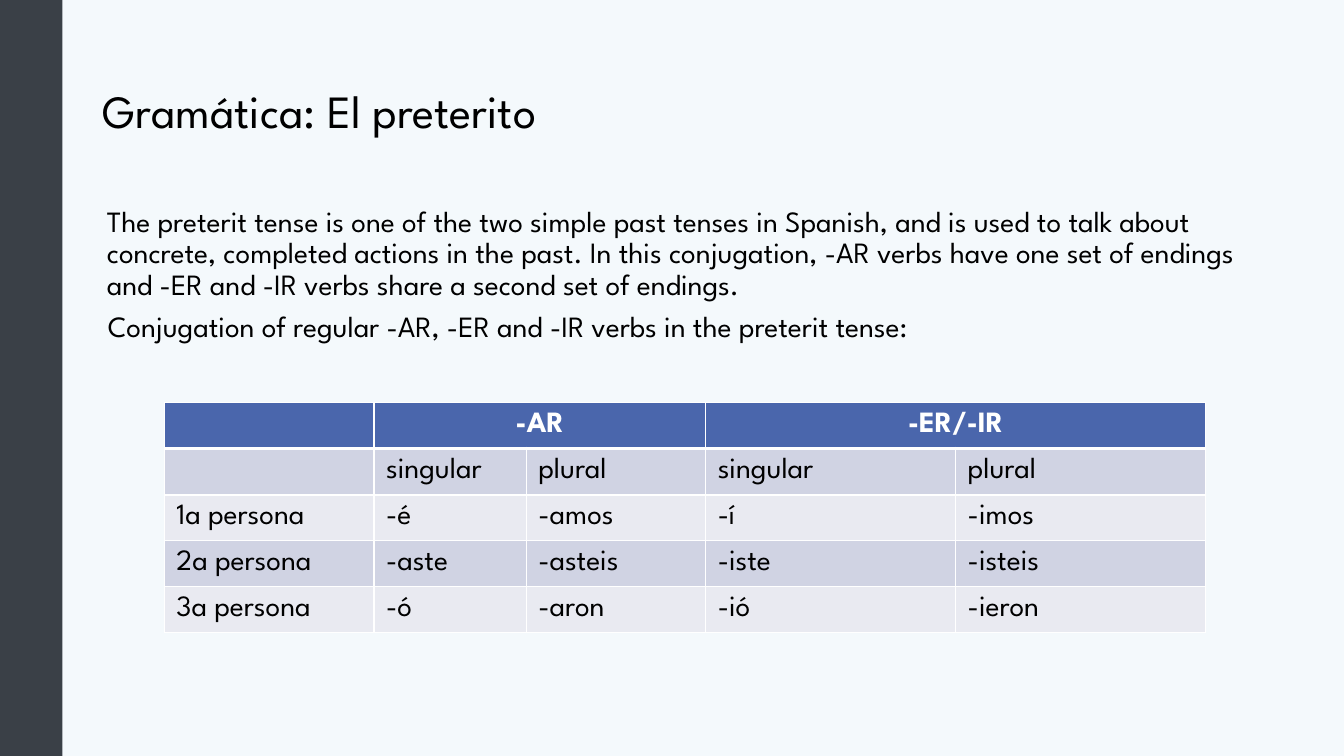
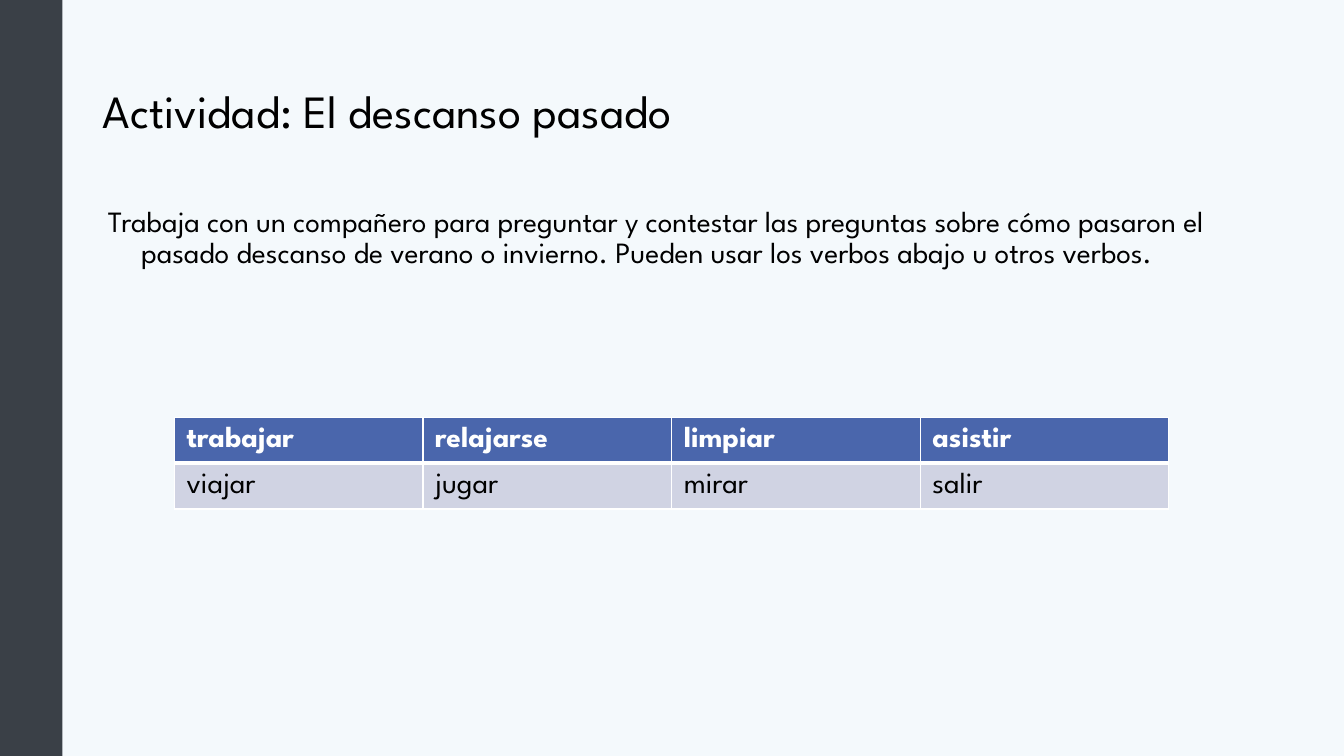
from lxml import etree
from pptx import Presentation
from pptx.dml.color import RGBColor
from pptx.enum.shapes import MSO_SHAPE
from pptx.enum.text import MSO_ANCHOR, MSO_AUTO_SIZE, PP_ALIGN
from pptx.oxml.ns import qn
from pptx.util import Inches, Pt

RECTANGLE = MSO_SHAPE.RECTANGLE
MIDDLE, TOP = MSO_ANCHOR.MIDDLE, MSO_ANCHOR.TOP
NO_FIT = MSO_AUTO_SIZE.NONE
LEFT, CENTER = PP_ALIGN.LEFT, PP_ALIGN.CENTER

PAPER, BAND, INK, WHITE = "F4F9FC", "3A4047", "000000", "FFFFFF"
HEADER, STRIPES = "4A66AC", ("E9EAF1", "D0D3E3")
TITLE_FONT = {"name": "League Spartan", "size": Pt(33), "bold": False}
TEXT_FONT = {**TITLE_FONT, "size": Pt(21)}
HEAD_FONT = {**TEXT_FONT, "bold": True}
PLAIN, HANGING = (0.04, 0), (0.38, -0.33)


def paint(target, color):
    target.rgb = RGBColor.from_string(color)


def write(p, text, font, color, align=LEFT):
    p.alignment = align
    r = p.add_run()
    r.text = text
    for name, value in font.items():
        setattr(r.font, name, value)
    paint(r.font.color, color)


SLIDES = [
    {
        "title": "Gramática: El preterito",
        "body": [
            ("The preterit tense is one of the two simple past tenses in Spanish, "
             "and is used to talk about concrete, completed actions in the past. "
             "In this conjugation, -AR verbs have one set of endings and -ER and "
             "-IR verbs share a second set of endings.", PLAIN),
            ("Conjugation of regular -AR, -ER and -IR verbs in the preterit tense:",
             HANGING),
        ],
        "table_at": (12.23, 53.2),
        "widths": [15.6, 11.33, 13.35, 18.6, 18.6],
        "merges": [(1, 2), (3, 4)],
        "rows": [
            ["", "-AR", "", "-ER/-IR", ""],
            ["", "singular", "plural", "singular", "plural"],
            ["1a persona", "-é", "-amos", "-í", "-imos"],
            ["2a persona", "-aste", "-asteis", "-iste", "-isteis"],
            ["3a persona", "-ó", "-aron", "-ió", "-ieron"],
        ],
    },
    {
        "title": "Actividad: El descanso pasado",
        "body": [
            ("Trabaja con un compañero para preguntar y contestar las preguntas "
             "sobre cómo pasaron el pasado descanso de verano o invierno. Pueden "
             "usar los verbos abajo u otros verbos.", HANGING),
        ],
        "table_at": (12.98, 55.2),
        "widths": [18.5] * 4,
        "merges": [],
        "rows": [
            ["trabajar", "relajarse", "limpiar", "asistir"],
            ["viajar", "jugar", "mirar", "salir"],
        ],
    },
]

prs = Presentation()
prs.slide_width, prs.slide_height = Inches(13.33), Inches(7.5)
X, Y = prs.slide_width / 100, prs.slide_height / 100
ROW_HEIGHT = 6.07

layout = prs.slide_layouts[1]
layout.background.fill.solid()
paint(layout.background.fill.fore_color, PAPER)
for ph, top, height in zip(layout.placeholders, (5.33, 26.67), (19.33, 63.47)):
    ph.left, ph.top = int(6.9 * X), int(top * Y)
    ph.width, ph.height = int(86.25 * X), int(height * Y)

for number, content in enumerate(SLIDES):
    s = prs.slides.add_slide(layout)
    if number == 0:
        band = s.shapes.add_shape(RECTANGLE, 0, 0, int(4.65 * X), prs.slide_height)
        band.shadow.inherit = False
        band.fill.solid()
        paint(band.fill.fore_color, BAND)
        band.line.fill.background()
        layout.shapes.element.insert(2, band.element)

    title, body = s.placeholders
    for ph, anchor in ((title, MIDDLE), (body, TOP)):
        tf = ph.text_frame
        tf.word_wrap, tf.auto_size, tf.vertical_anchor = True, NO_FIT, anchor

    p = title.text_frame.paragraphs[0]
    p.line_spacing = 0.9
    write(p, content["title"], TITLE_FONT, INK)

    tf = body.text_frame
    for i, (text, (margin, indent)) in enumerate(content["body"]):
        p = tf.add_paragraph() if i else tf.paragraphs[0]
        p.line_spacing, p.space_before = 0.9, Pt(7.5)
        write(p, text, TEXT_FONT, INK)
        pPr = p._p.get_or_add_pPr()
        pPr.set("marL", str(Inches(margin)))
        pPr.set("indent", str(Inches(indent)))
        etree.SubElement(pPr, qn("a:buNone"))

    rows, widths = content["rows"], content["widths"]
    left, top = content["table_at"]
    table = s.shapes.add_table(
        len(rows), len(widths), int(left * X), int(top * Y),
        int(sum(widths) * X), int(len(rows) * ROW_HEIGHT * Y)).table
    for column, width in zip(table.columns, widths):
        column.width = int(width * X)
    for first, last in content["merges"]:
        table.cell(0, first).merge(table.cell(0, last))

    for i, row in enumerate(rows):
        for j, text in enumerate(row):
            cell = table.cell(i, j)
            cell.vertical_anchor = MIDDLE
            cell.margin_left = cell.margin_right = Inches(0.12)
            cell.margin_top = cell.margin_bottom = Inches(0.09)
            tcPr = cell._tc.get_or_add_tcPr()
            for side in "LRTB":
                thick = (i, side) in ((0, "B"), (1, "T"))
                ln = etree.SubElement(tcPr, qn("a:ln" + side), w=str(Pt(3 if thick else 1)))
                fill = etree.SubElement(ln, qn("a:solidFill"))
                etree.SubElement(fill, qn("a:srgbClr"), val=WHITE)
            cell.fill.solid()
            paint(cell.fill.fore_color, STRIPES[i % 2] if i else HEADER)
            write(cell.text_frame.paragraphs[0], text,
                  TEXT_FONT if i else HEAD_FONT, INK if i else WHITE,
                  CENTER if cell.is_merge_origin else LEFT)

prs.save("out.pptx")
